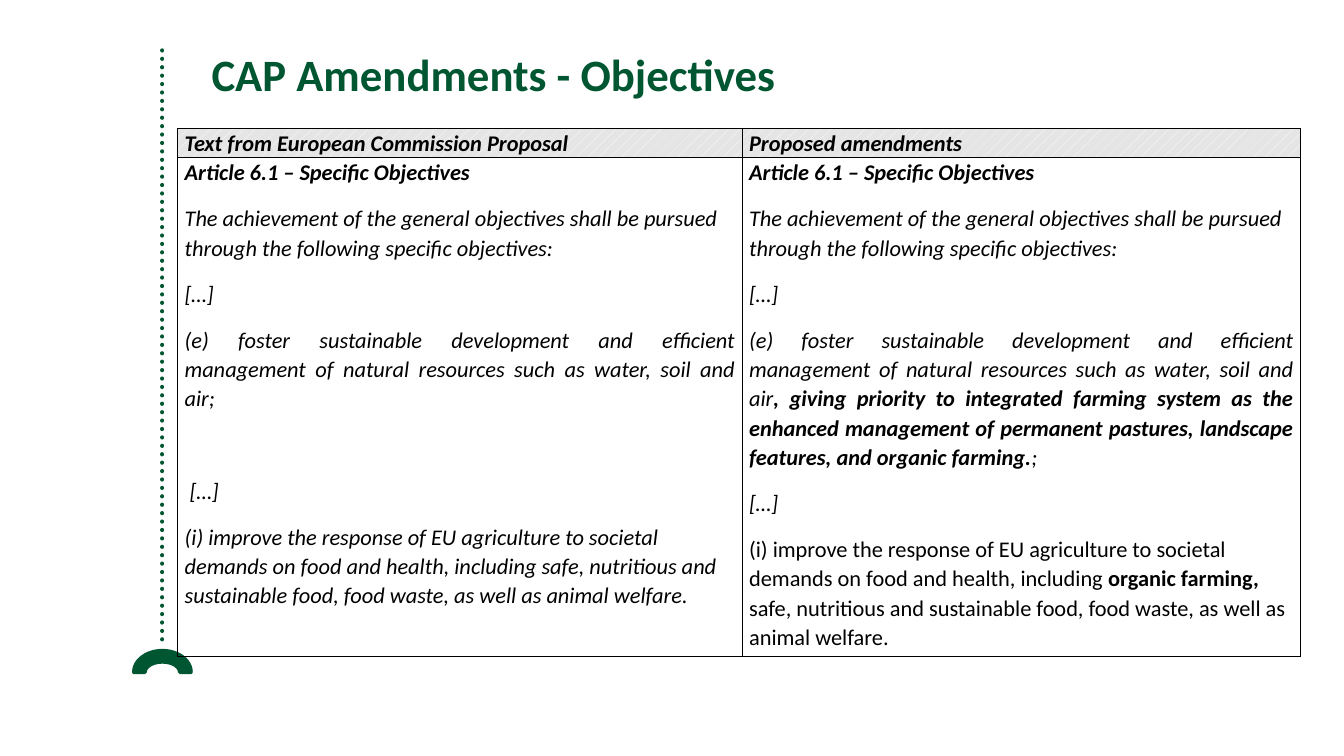
from lxml.etree import SubElement
from pptx import Presentation
from pptx.dml.color import RGBColor
from pptx.enum.dml import MSO_LINE, MSO_PATTERN
from pptx.enum.shapes import MSO_CONNECTOR as Connector, MSO_SHAPE as Preset
from pptx.enum.text import PP_ALIGN as Align
from pptx.oxml.ns import qn
from pptx.util import Pt

COLORS = {"green": "005631", "black": "000000", "white": "FFFFFF", "grey": "E5E5E5"}
BODY = {"name": "Calibri", "size": Pt(16), "bold": False, "italic": True}
HEADING = BODY | {"bold": True}
PLAIN = BODY | {"italic": False}
PLAIN_BOLD = PLAIN | {"bold": True}
TITLE = PLAIN_BOLD | {"size": Pt(32)}
SPACING = {"line_spacing": 1.07, "space_before": Pt(6), "space_after": Pt(6)}
JUSTIFIED = SPACING | {"alignment": Align.JUSTIFY}
AFTER_GAP = JUSTIFIED | {"space_before": Pt(39)}

COLUMN_WIDTHS = (403.2, 398.9)
ROW_HEIGHTS = (20.9, 356.5)
HEADERS = ("Text from European Commission Proposal", "Proposed amendments")
OPENING = [
    (SPACING, [("Article 6.1 – Specific Objectives", HEADING)]),
    (SPACING, [("The achievement of the general objectives shall be pursued "
                "through the following specific objectives:", BODY)]),
    (JUSTIFIED, [("[…]", BODY)]),
]
POINT_E = ("(e) foster sustainable development and efficient management of "
           "natural resources such as water, soil and air")
POINT_I = ("(i) improve the response of EU agriculture to societal demands "
           "on food and health, including ")
POINT_I_END = ("safe, nutritious and sustainable food, food waste, "
               "as well as animal welfare.")
PROPOSAL = OPENING + [
    (JUSTIFIED, [(POINT_E + ";", BODY)]),
    (AFTER_GAP, [(" […]", BODY)]),
    (SPACING, [(POINT_I + POINT_I_END, BODY)]),
]
AMENDMENTS = OPENING + [
    (JUSTIFIED, [
        (POINT_E, BODY),
        (", giving priority to integrated farming system as the enhanced "
         "management of permanent pastures, landscape features, and organic "
         "farming.", HEADING),
        (";", BODY),
    ]),
    (JUSTIFIED, [("[…]", BODY)]),
    (SPACING, [(POINT_I, PLAIN), ("organic farming,", PLAIN_BOLD),
               (" " + POINT_I_END, PLAIN)]),
]


def rgb(color):
    """Return the named colour."""
    return RGBColor.from_string(COLORS[color])


def apply(target, values):
    """Set every attribute listed in a dict of format values."""
    for attribute, value in values.items():
        setattr(target, attribute, value)


def write(frame, paragraphs, color):
    """Fill a text frame with formatted paragraphs and runs."""
    for index, (layout, pieces) in enumerate(paragraphs):
        paragraph = frame.add_paragraph() if index else frame.paragraphs[0]
        apply(paragraph, layout)
        if not index:
            paragraph.space_before = Pt(0)
        for text, style in pieces:
            run = paragraph.add_run()
            run.text = text
            apply(run.font, style)
            run.font.color.rgb = rgb(color)


def add_title(slide, text):
    """Add the slide title."""
    frame = slide.shapes.add_textbox(Pt(144), Pt(30), Pt(768), Pt(90)).text_frame
    frame.word_wrap = True
    write(frame, [({}, [(text, TITLE)])], "green")


def add_side_rule(slide):
    """Add the dotted vertical rule and the arc beneath it."""
    rule = slide.shapes.add_connector(
        Connector.STRAIGHT, Pt(116), Pt(36), Pt(116), Pt(461.5))
    arc = slide.shapes.add_shape(
        Preset.BLOCK_ARC, Pt(95.8), Pt(465), Pt(40.4), Pt(30.2))
    for part in (rule, arc):
        part.line.color.rgb = rgb("green")
        part.line.width = Pt(3)
    rule.line.dash_style = MSO_LINE.ROUND_DOT
    properties = rule._element.spPr
    properties.find(qn("a:ln")).set("cap", "rnd")
    SubElement(properties, qn("a:effectLst"))
    arc.shadow.inherit = False
    arc.fill.solid()
    arc.fill.fore_color.rgb = rgb("green")


def add_borders(cell):
    """Draw a thin black line on each side of a cell."""
    properties = cell._tc.get_or_add_tcPr()
    for side in ("lnL", "lnR", "lnT", "lnB"):
        border = SubElement(properties, qn(f"a:{side}"), w=str(Pt(1)))
        fill = SubElement(border, qn("a:solidFill"))
        SubElement(fill, qn("a:srgbClr"), val=COLORS["black"])


def fill_cell(cell, paragraphs, is_header):
    """Write and format one table cell."""
    apply(cell, {"margin_left": Pt(5), "margin_right": Pt(5),
                 "margin_top": 0, "margin_bottom": 0})
    write(cell.text_frame, paragraphs, "black")
    add_borders(cell)
    if is_header:
        cell.fill.patterned()
        cell.fill.pattern = MSO_PATTERN.PERCENT_10
        cell.fill.fore_color.rgb = rgb("white")
        cell.fill.back_color.rgb = rgb("grey")
    else:
        cell.fill.background()


def add_comparison(slide, rows):
    """Add the table that compares the proposal with the amendments."""
    table = slide.shapes.add_table(
        len(rows), len(COLUMN_WIDTHS), Pt(126.9), Pt(91.5),
        Pt(sum(COLUMN_WIDTHS)), Pt(sum(ROW_HEIGHTS))).table
    apply(table, {"first_row": False, "horz_banding": False})
    for column, width in zip(table.columns, COLUMN_WIDTHS):
        column.width = Pt(width)
    for index, (row, contents) in enumerate(zip(table.rows, rows)):
        row.height = Pt(ROW_HEIGHTS[index])
        for cell, paragraphs in zip(row.cells, contents):
            fill_cell(cell, paragraphs, index == 0)


def main():
    """Build and save the slide."""
    deck = Presentation()
    apply(deck, {"slide_width": Pt(960), "slide_height": Pt(540)})
    slide = deck.slides.add_slide(deck.slide_layouts[6])
    add_side_rule(slide)
    add_title(slide, "CAP Amendments - Objectives")
    headers = [[(SPACING, [(text, HEADING)])] for text in HEADERS]
    add_comparison(slide, [headers, [PROPOSAL, AMENDMENTS]])
    deck.save("out.pptx")


if __name__ == "__main__":
    main()
